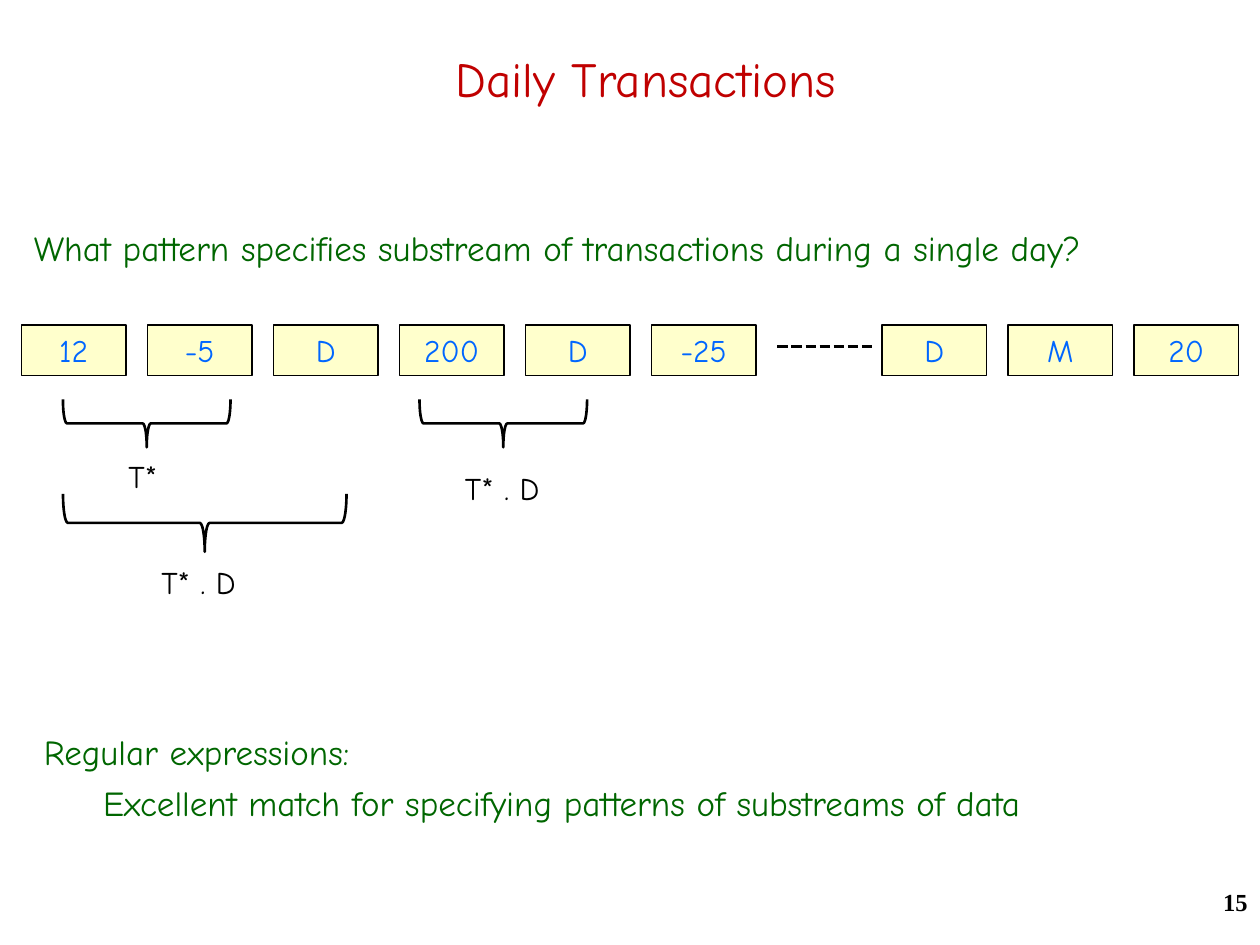
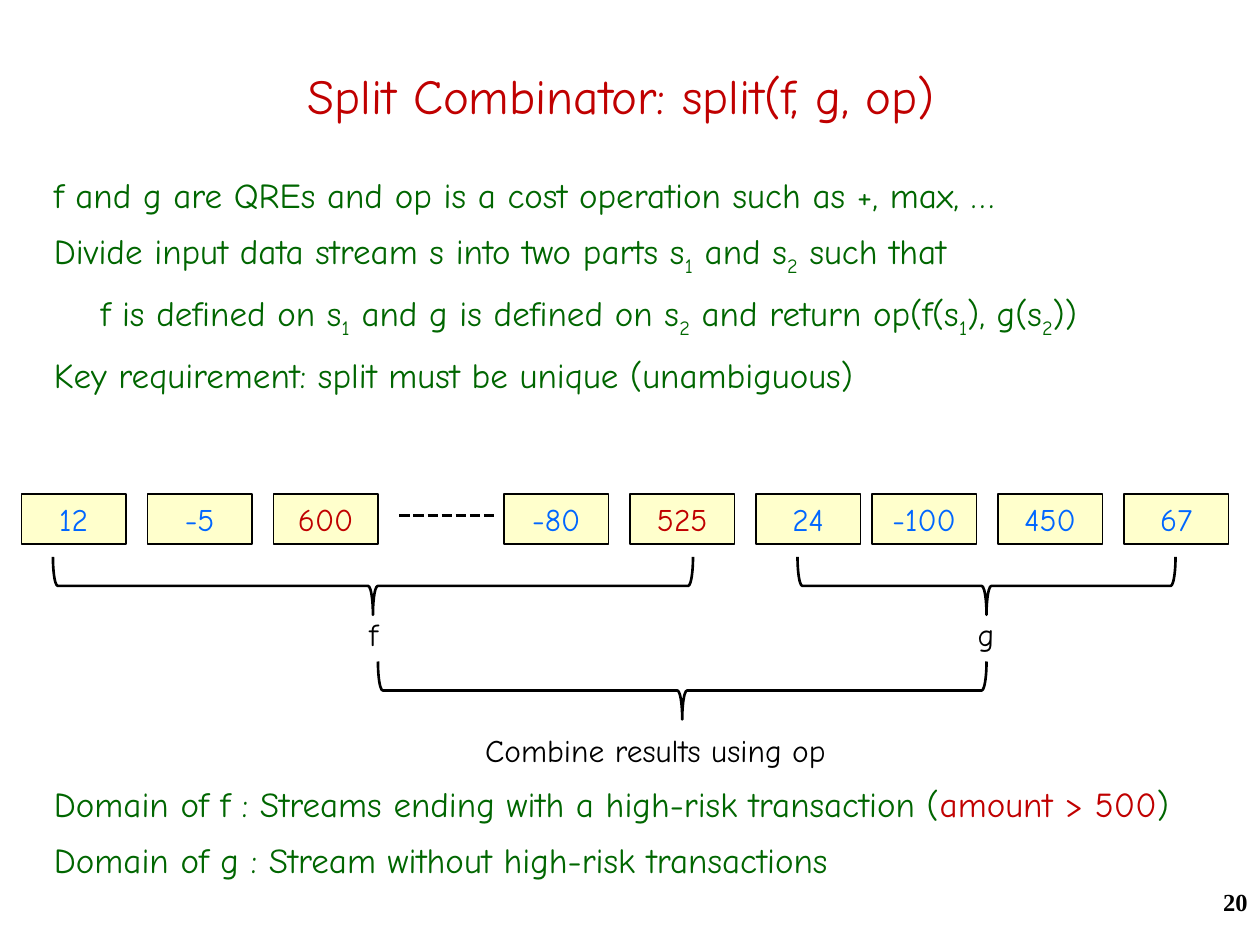
from dataclasses import dataclass

from lxml import etree
from pptx import Presentation
from pptx.dml.color import RGBColor
from pptx.enum.dml import MSO_LINE
from pptx.enum.shapes import MSO_CONNECTOR, MSO_SHAPE
from pptx.enum.text import MSO_ANCHOR, PP_ALIGN
from pptx.oxml.ns import qn
from pptx.util import Inches, Pt

LEFT, CENTER, RIGHT = PP_ALIGN.LEFT, PP_ALIGN.CENTER, PP_ALIGN.RIGHT
TOP, MIDDLE = MSO_ANCHOR.TOP, MSO_ANCHOR.MIDDLE
RECTANGLE, BRACE = MSO_SHAPE.RECTANGLE, MSO_SHAPE.LEFT_BRACE
STRAIGHT, SHORT_DASH = MSO_CONNECTOR.STRAIGHT, MSO_LINE.SQUARE_DOT


@dataclass(frozen=True)
class Theme:
    """Colours, fonts and type sizes of the deck."""
    accent: RGBColor = RGBColor(0xC0, 0x00, 0x00)
    body: RGBColor = RGBColor(0x00, 0x66, 0x00)
    value: RGBColor = RGBColor(0x00, 0x66, 0xFF)
    cell: RGBColor = RGBColor(0xFF, 0xFF, 0xCC)
    ink: RGBColor = RGBColor(0x00, 0x00, 0x00)
    font: str = "Comic Neue"
    number_font: str = "Times New Roman"
    title_size: int = 28
    body_size: int = 20
    label_size: int = 18
    number_size: int = 14


THEME = Theme()
CELL_WIDTH, CELL_HEIGHT, CELL_PITCH = 0.83, 0.4, 1
DASH_LENGTH, DASH_DROP = 0.75, 0.17
LABEL_INSET = 0.18
HIGH_RISK = 500
SUBSCRIPT, ACCENT = "subscript", "accent"
ONE, TWO = ("1", SUBSCRIPT), ("2", SUBSCRIPT)


def style_run(run, size, color, font=THEME.font, bold=False):
    """Give a run its font, size and colour."""
    run.font.name = font
    run.font.size = Pt(size)
    run.font.color.rgb = color
    run.font.bold = bold


def add_text(slide, box, text, size, color, align=LEFT, anchor=TOP, **style):
    """Add a one-paragraph text box and return its text frame."""
    text_frame = slide.shapes.add_textbox(*map(Inches, box)).text_frame
    text_frame.word_wrap = True
    text_frame.vertical_anchor = anchor
    text_frame.text = text
    paragraph = text_frame.paragraphs[0]
    paragraph.alignment = align
    style_run(paragraph.runs[0], size, color, **style)
    return text_frame


def add_frame(presentation, title, title_box, number):
    """Add a slide with its title and page number."""
    slide = presentation.slides.add_slide(presentation.slide_layouts[6])
    add_text(slide, title_box, title, THEME.title_size, THEME.accent, CENTER, MIDDLE)
    add_text(slide, (7.92, 6.99, 2.08, 0.5), number, THEME.number_size, THEME.ink,
             RIGHT, font=THEME.number_font, bold=True)
    return slide


def add_body(slide, box, lines, space=0):
    """Add body lines, each an indent followed by plain or marked pieces."""
    text_frame = slide.shapes.add_textbox(*map(Inches, box)).text_frame
    text_frame.word_wrap = True
    for index, (indent, *pieces) in enumerate(lines):
        paragraph = text_frame.add_paragraph() if index else text_frame.paragraphs[0]
        paragraph.space_before = Pt(space if index else 0)
        properties = paragraph._p.get_or_add_pPr()
        properties.set("marL", str(Inches(indent)))
        for piece in pieces:
            text, mark = piece if isinstance(piece, tuple) else (piece, None)
            run = paragraph.add_run()
            run.text = text
            style_run(run, THEME.body_size, THEME.accent if mark == ACCENT else THEME.body)
            if mark == SUBSCRIPT:
                run._r.get_or_add_rPr().set("baseline", "-25000")


def add_cell(slide, left, top, value):
    """Add one stream item, in the accent colour when it is high-risk."""
    shape = slide.shapes.add_shape(
        RECTANGLE, *map(Inches, (left, top, CELL_WIDTH, CELL_HEIGHT)))
    shape.shadow.inherit = False
    shape.fill.solid()
    shape.fill.fore_color.rgb = THEME.cell
    shape.line.color.rgb = THEME.ink
    shape.line.width = Pt(1)
    shape.text_frame.text = value
    paragraph = shape.text_frame.paragraphs[0]
    paragraph.alignment = CENTER
    high_risk = value.isdigit() and int(value) > HIGH_RISK
    style_run(paragraph.runs[0], THEME.label_size,
              THEME.accent if high_risk else THEME.value)


def add_stream(slide, top, groups, dash_left):
    """Add a row of evenly spaced groups of items and the dashes for omitted ones."""
    for group_left, values in groups:
        for index, value in enumerate(values):
            add_cell(slide, group_left + index * CELL_PITCH, top, value)
    dash_top = top + DASH_DROP
    dash = slide.shapes.add_connector(
        STRAIGHT, *map(Inches, (dash_left, dash_top, dash_left + DASH_LENGTH, dash_top)))
    dash.line.color.rgb = THEME.ink
    dash.line.width = Pt(2)
    dash.line.dash_style = SHORT_DASH
    etree.SubElement(dash._element.spPr, qn("a:effectLst"))


def add_brace(slide, box, label, label_box):
    """Add a brace that fills the box and points down to its label."""
    left, top, width, height = box
    shape = slide.shapes.add_shape(BRACE, *map(Inches, (
        left + (width - height) / 2, top + (height - width) / 2, height, width)))
    shape.rotation = 270
    shape.shadow.inherit = False
    shape.fill.background()
    shape.line.color.rgb = THEME.ink
    shape.line.width = Pt(1.5)
    text_frame = add_text(slide, label_box, label, THEME.label_size, THEME.ink)
    text_frame.margin_left = Inches(LABEL_INSET)
    text_frame.word_wrap = label_box[2] > 3


def build_daily_transactions(presentation):
    """Build the slide on patterns within a day."""
    slide = add_frame(presentation, "Daily Transactions", (0.25, 0.33, 9.75, 0.58), "15")
    add_body(slide, (0.17, 1.75, 9.83, 0.83), [
        (0, "What pattern specifies substream of transactions during a single day?")])
    add_stream(slide, 2.58, [(0.17, ["12", "-5", "D", "200", "D", "-25"]),
                             (7, ["D", "M", "20"])], 6.17)
    add_body(slide, (0.25, 5.75, 9.62, 1.25), [
        (0, "Regular expressions:"),
        (0.47, "Excellent match for specifying patterns of substreams of data")], 5)
    add_brace(slide, (0.5, 3.17, 1.33, 0.38), "T*", (0.84, 3.58, 0.66, 0.4))
    add_brace(slide, (0.5, 3.92, 2.25, 0.46), "T* . D", (1.1, 4.42, 1.05, 0.4))
    add_brace(slide, (3.33, 3.17, 1.33, 0.38), "T* . D", (3.51, 3.67, 0.98, 0.4))


def build_split_combinator(presentation):
    """Build the slide on splitting a stream in two."""
    slide = add_frame(presentation, "Split Combinator: split(f, g, op)",
                      (0.68, 0.42, 8.5, 0.67), "20")
    add_body(slide, (0.33, 1.33, 9.67, 2), [
        (0, "f and g are QREs and op is a cost operation such as +, max, …"),
        (0, "Divide input data stream s into two parts s", ONE, " and s", TWO, " such that"),
        (0.37, "f is defined on s", ONE, " and g is defined on s", TWO,
         " and return op(f(s", ONE, "), g(s", TWO, "))"),
        (0, "Key requirement: split must be unique (unambiguous)")], 8)
    add_body(slide, (0.33, 6.16, 9.67, 0.84), [
        (0, "Domain of f : Streams ending with a high-risk transaction (",
         ("amount > 500", ACCENT), ")"),
        (0, "Domain of g : Stream without high-risk transactions")], 8)
    add_stream(slide, 3.92, [(0.17, ["12", "-5", "600"]), (4, ["-80", "525", "24"]),
                             (6.92, ["-100", "450", "67"])], 3.17)
    add_brace(slide, (0.42, 4.42, 5.08, 0.46), "f", (2.75, 4.83, 0.41, 0.4))
    add_brace(slide, (6.33, 4.42, 3, 0.46), "g", (7.58, 4.83, 0.42, 0.4))
    add_brace(slide, (3, 5.25, 4.83, 0.46), "Combine results using op",
              (3.67, 5.75, 3.42, 0.4))


def main():
    """Build and save the presentation."""
    presentation = Presentation()
    presentation.slide_width = Inches(10)
    presentation.slide_height = Inches(7.5)
    build_daily_transactions(presentation)
    build_split_combinator(presentation)
    presentation.save("out.pptx")


if __name__ == "__main__":
    main()
